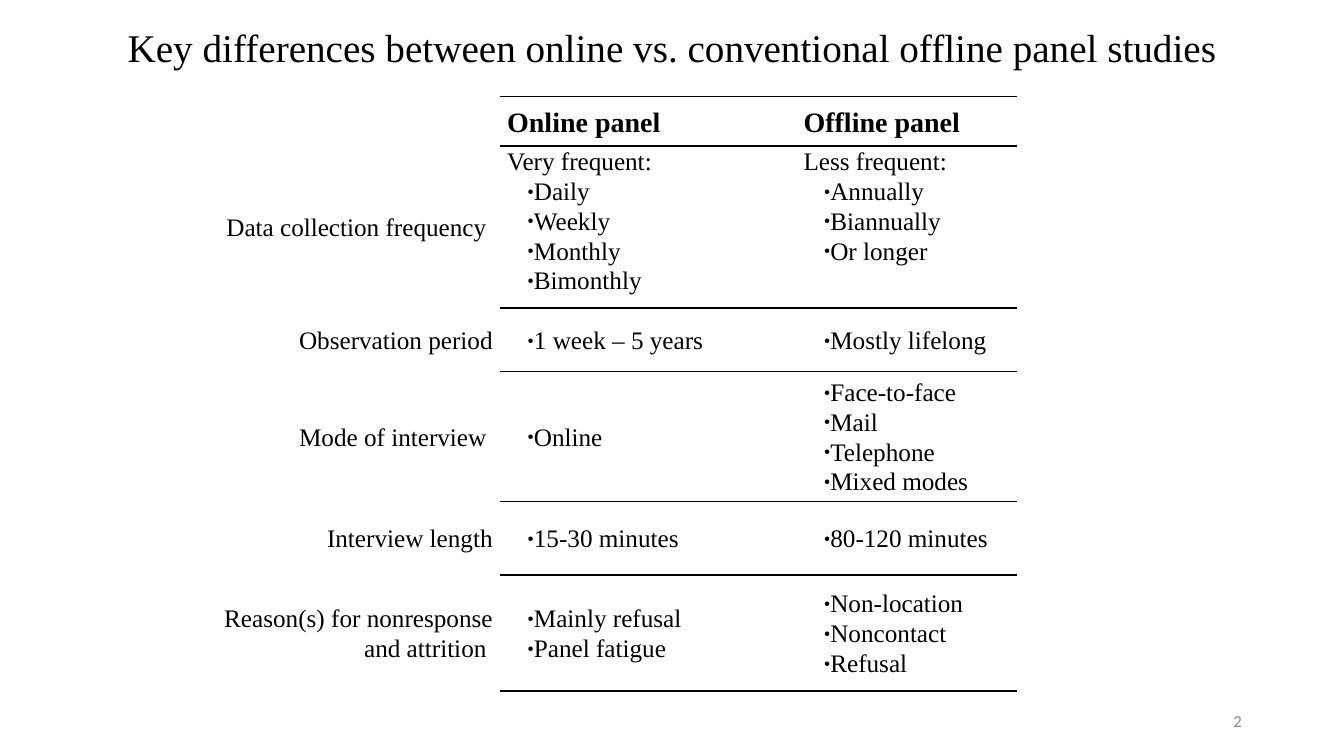
from dataclasses import dataclass

from lxml.etree import SubElement
from pptx import Presentation
from pptx.dml.color import RGBColor
from pptx.enum.text import MSO_ANCHOR, PP_ALIGN
from pptx.oxml.ns import qn
from pptx.util import Cm, Pt

SERIF = "Times New Roman"
BLACK = "000000"
NO_STYLE_NO_GRID = "{2D5ABB26-0587-4C30-8999-92F81FD0307C}"
COLUMN_WIDTHS = (7.34, 7.47, 5.56)


@dataclass
class Panel:
    """What one panel type shows in one row: an optional lead line, then bullets."""
    bullets: tuple[str, ...]
    lead: str = ""


@dataclass
class Aspect:
    label: str
    height: float
    online: Panel
    offline: Panel
    anchor: MSO_ANCHOR = MSO_ANCHOR.MIDDLE


HEADER_HEIGHT = 1.24
ASPECTS = [
    Aspect("Data collection frequency ", 4.08,
           Panel(("Daily", "Weekly", "Monthly", "Bimonthly"), "Very frequent:"),
           Panel(("Annually", "Biannually", "Or longer"), "Less frequent:"),
           MSO_ANCHOR.TOP),
    Aspect("Observation period", 1.61,
           Panel(("1 week – 5 years",)), Panel(("Mostly lifelong",))),
    Aspect("Mode of interview ", 3.25,
           Panel(("Online",)),
           Panel(("Face-to-face", "Mail", "Telephone", "Mixed modes"))),
    Aspect("Interview length", 1.86,
           Panel(("15-30 minutes",)), Panel(("80-120 minutes",))),
    Aspect("Reason(s) for nonresponse and attrition ", 2.92,
           Panel(("Mainly refusal", "Panel fatigue")),
           Panel(("Non-location", "Noncontact", "Refusal"))),
]


def rgb(color: str) -> RGBColor:
    return RGBColor.from_string(color)


def write(paragraph, text: str, *, size: float = 18, font: str = SERIF,
          color: str = BLACK, bold: bool = False, align=PP_ALIGN.LEFT,
          spacing: float = 1.0, bullet: bool = False) -> None:
    run = paragraph.add_run()
    run.text = text
    run.font.size = Pt(size)
    run.font.name = font
    run.font.bold = bold
    run.font.color.rgb = rgb(color)
    paragraph.alignment = align
    paragraph.line_spacing = spacing
    if bullet:
        add_bullet(paragraph)


def add_bullet(paragraph) -> None:
    paragraph.level = 1
    properties = paragraph._p.get_or_add_pPr()
    properties.set("marL", "0")
    properties.set("indent", str(Cm(0.51)))
    SubElement(properties, qn("a:buSzPct"), val="75000")
    SubElement(properties, qn("a:buFont"), typeface=SERIF)
    SubElement(properties, qn("a:buChar"), char="•")
    tabs = SubElement(properties, qn("a:tabLst"))
    SubElement(tabs, qn("a:tab"), pos=str(Cm(0.64)), algn="l")


def add_rules(cell) -> None:
    """Draw the lines above and below a cell."""
    properties = cell._tc.get_or_add_tcPr()
    for side in ("a:lnT", "a:lnB"):
        rule = SubElement(properties, qn(side), w=str(Pt(1)))
        fill = SubElement(rule, qn("a:solidFill"))
        SubElement(fill, qn("a:srgbClr"), val=BLACK)


def fill_cell(cell, lines: list[tuple[str, dict]], *, ruled: bool = True,
              anchor=MSO_ANCHOR.MIDDLE) -> None:
    cell.margin_left = cell.margin_right = Cm(0.18)
    cell.margin_top = cell.margin_bottom = 0
    cell.vertical_anchor = anchor
    if ruled:
        add_rules(cell)
    cell.fill.background()
    for index, (text, style) in enumerate(lines):
        frame = cell.text_frame
        paragraph = frame.add_paragraph() if index else frame.paragraphs[0]
        write(paragraph, text, spacing=1.07, **style)


def panel_lines(panel: Panel) -> list[tuple[str, dict]]:
    lead = [(panel.lead, {})] if panel.lead else []
    return lead + [(text, {"bullet": True}) for text in panel.bullets]


def add_comparison(slide) -> None:
    heights = [HEADER_HEIGHT] + [aspect.height for aspect in ASPECTS]
    frame = slide.shapes.add_table(
        len(heights), len(COLUMN_WIDTHS), Cm(5.26), Cm(2.44),
        Cm(sum(COLUMN_WIDTHS)), Cm(sum(heights)))
    table = frame.table
    table.first_row = table.horz_banding = False
    table._tbl.tblPr.find(qn("a:tableStyleId")).text = NO_STYLE_NO_GRID
    for column, width in zip(table.columns, COLUMN_WIDTHS):
        column.width = Cm(width)
    for row, height in zip(table.rows, heights):
        row.height = Cm(height)

    heading = {"size": 20, "bold": True}
    fill_cell(table.cell(0, 0), [], ruled=False)
    fill_cell(table.cell(0, 1), [("Online panel", heading)])
    fill_cell(table.cell(0, 2), [("Offline panel", heading)])
    for row, aspect in enumerate(ASPECTS, start=1):
        label = [(aspect.label, {"align": PP_ALIGN.RIGHT})]
        fill_cell(table.cell(row, 0), label, ruled=False)
        for column, panel in enumerate((aspect.online, aspect.offline), start=1):
            fill_cell(table.cell(row, column), panel_lines(panel),
                      anchor=aspect.anchor)


def add_text(slide, text: str, left: float, top: float, width: float,
             height: float, *, anchor=MSO_ANCHOR.TOP, **style) -> None:
    box = slide.shapes.add_textbox(Cm(left), Cm(top), Cm(width), Cm(height))
    box.text_frame.word_wrap = True
    box.text_frame.vertical_anchor = anchor
    write(box.text_frame.paragraphs[0], text, **style)


def main() -> None:
    presentation = Presentation()
    presentation.slide_width = Cm(33.87)
    presentation.slide_height = Cm(19.05)
    slide = presentation.slides.add_slide(presentation.slide_layouts[6])
    add_text(slide,
             "Key differences between online vs. conventional offline panel studies",
             0, 0.46, 33.87, 1.45, size=28, align=PP_ALIGN.CENTER)
    add_comparison(slide)
    add_text(slide, "2", 23.93, 17.65, 7.62, 1.02, anchor=MSO_ANCHOR.MIDDLE,
             size=12, font="Calibri", color="8C8C8C", align=PP_ALIGN.RIGHT)
    presentation.save("out.pptx")


if __name__ == "__main__":
    main()
